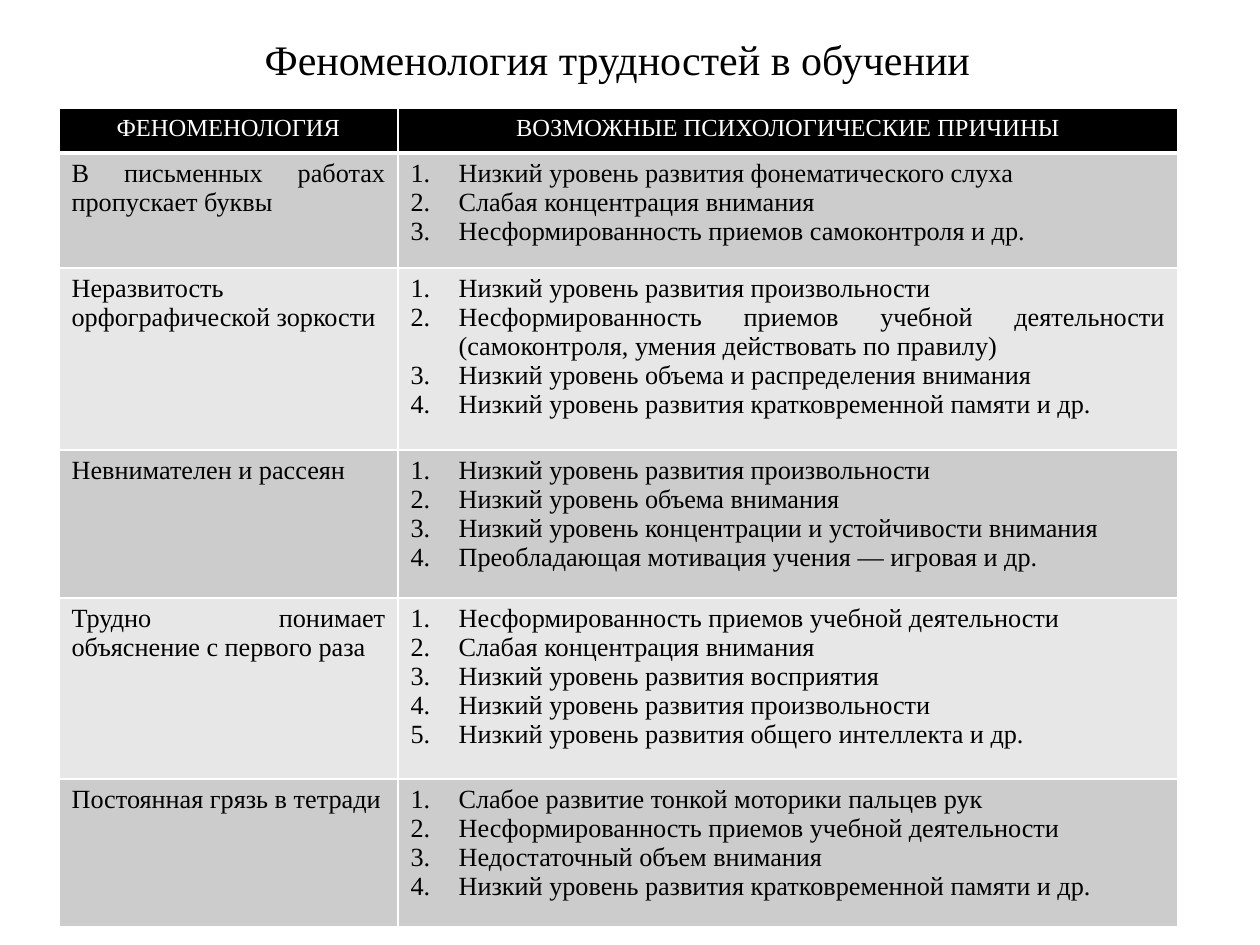
from lxml.etree import SubElement
from pptx import Presentation
from pptx.dml.color import RGBColor
from pptx.enum.text import MSO_ANCHOR, MSO_AUTO_SIZE, PP_ALIGN
from pptx.oxml.ns import qn
from pptx.util import Emu, Pt

FONT = "Times New Roman"
BLACK = RGBColor(0x00, 0x00, 0x00)
WHITE = RGBColor(0xFF, 0xFF, 0xFF)
DARK_BAND = RGBColor(0xCC, 0xCC, 0xCC)
LIGHT_BAND = RGBColor(0xE7, 0xE7, 0xE7)

TITLE = "Феноменология трудностей в обучении"
HEADERS = ["ФЕНОМЕНОЛОГИЯ", "ВОЗМОЖНЫЕ ПСИХОЛОГИЧЕСКИЕ ПРИЧИНЫ"]
DIFFICULTIES = [
    ("В письменных работах пропускает буквы", [
        "Низкий уровень развития фонематического слуха",
        "Слабая концентрация внимания",
        "Несформированность приемов самоконтроля и др.",
    ]),
    ("Неразвитость орфографической зоркости", [
        "Низкий уровень развития произвольности",
        "Несформированность приемов учебной деятельности "
        "(самоконтроля, умения действовать по правилу)",
        "Низкий уровень объема и распределения внимания",
        "Низкий уровень развития кратковременной памяти и др.",
    ]),
    ("Невнимателен и рассеян", [
        "Низкий уровень развития произвольности",
        "Низкий уровень объема внимания",
        "Низкий уровень концентрации и устойчивости внимания",
        "Преобладающая мотивация учения — игровая и др.",
    ]),
    ("Трудно понимает объяснение с первого раза", [
        "Несформированность приемов учебной деятельности",
        "Слабая концентрация внимания",
        "Низкий уровень развития восприятия",
        "Низкий уровень развития произвольности",
        "Низкий уровень развития общего интеллекта и др.",
    ]),
    ("Постоянная грязь в тетради", [
        "Слабое развитие тонкой моторики пальцев рук",
        "Несформированность приемов учебной деятельности",
        "Недостаточный объем внимания",
        "Низкий уровень развития кратковременной памяти и др.",
    ]),
]
COLUMN_WIDTHS = [339, 780]
ROW_HEIGHTS = [45, 115, 182, 148, 181, 148]
NUMBER_INDENT = 48


def px(length):
    return Emu(round(length * 914400 / 126))


def format_paragraph(paragraph, size, color, alignment):
    paragraph.alignment = alignment
    for run in paragraph.runs:
        run.font.name = FONT
        run.font.size = Pt(size)
        run.font.color.rgb = color


def number_paragraph(paragraph):
    properties = paragraph._p.get_or_add_pPr()
    properties.set("marL", str(px(NUMBER_INDENT)))
    properties.set("indent", str(-px(NUMBER_INDENT)))
    SubElement(properties, qn("a:buFont"), typeface="+mj-lt")
    SubElement(properties, qn("a:buAutoNum"), type="arabicPeriod")


def add_borders(cell, bottom_width, top_width):
    properties = cell._tc.get_or_add_tcPr()
    widths = {"a:lnL": 1, "a:lnR": 1, "a:lnT": top_width, "a:lnB": bottom_width}
    for tag, width in widths.items():
        line = SubElement(properties, qn(tag), w=str(Pt(width)))
        fill = SubElement(line, qn("a:solidFill"))
        SubElement(fill, qn("a:srgbClr"), val=str(WHITE))


def fill_cell(cell, lines, fill, size, color, alignment, numbered=False):
    cell.fill.solid()
    cell.fill.fore_color.rgb = fill
    cell.text_frame.text = "\n".join(lines)
    for paragraph in cell.text_frame.paragraphs:
        if numbered:
            number_paragraph(paragraph)
        format_paragraph(paragraph, size, color, alignment)


def add_title(slide):
    title = slide.shapes.title
    title.left, title.top, title.width, title.height = map(px, (58, 32, 1119, 59))
    title.fill.solid()
    title.fill.fore_color.rgb = WHITE
    text_frame = title.text_frame
    text_frame.text = TITLE
    text_frame.auto_size = MSO_AUTO_SIZE.NONE
    text_frame.vertical_anchor = MSO_ANCHOR.MIDDLE
    paragraph = text_frame.paragraphs[0]
    paragraph.line_spacing = 0.9
    format_paragraph(paragraph, 24, BLACK, PP_ALIGN.CENTER)


def add_difficulty_table(slide):
    frame = slide.shapes.add_table(
        len(ROW_HEIGHTS), len(COLUMN_WIDTHS), px(59), px(108),
        px(sum(COLUMN_WIDTHS)), px(sum(ROW_HEIGHTS)))
    table = frame.table
    for column, width in zip(table.columns, COLUMN_WIDTHS):
        column.width = px(width)
    for index, (row, height) in enumerate(zip(table.rows, ROW_HEIGHTS)):
        row.height = px(height)
        for cell in row.cells:
            add_borders(cell, 3 if index == 0 else 1, 3 if index == 1 else 1)

    # Header row
    for cell, header in zip(table.rows[0].cells, HEADERS):
        fill_cell(cell, [header], BLACK, 14, WHITE, PP_ALIGN.CENTER)

    # Difficulties with their numbered causes, in alternating bands
    for index, (difficulty, causes) in enumerate(DIFFICULTIES, start=1):
        band = DARK_BAND if index % 2 else LIGHT_BAND
        fill_cell(table.cell(index, 0), [difficulty], band, 15, BLACK,
                  PP_ALIGN.JUSTIFY)
        fill_cell(table.cell(index, 1), causes, band, 15, BLACK,
                  PP_ALIGN.JUSTIFY, numbered=True)


def main():
    presentation = Presentation()
    presentation.slide_width = px(1260)
    presentation.slide_height = px(945)
    slide = presentation.slides.add_slide(presentation.slide_layouts[5])
    add_title(slide)
    add_difficulty_table(slide)
    presentation.save("out.pptx")


if __name__ == "__main__":
    main()
